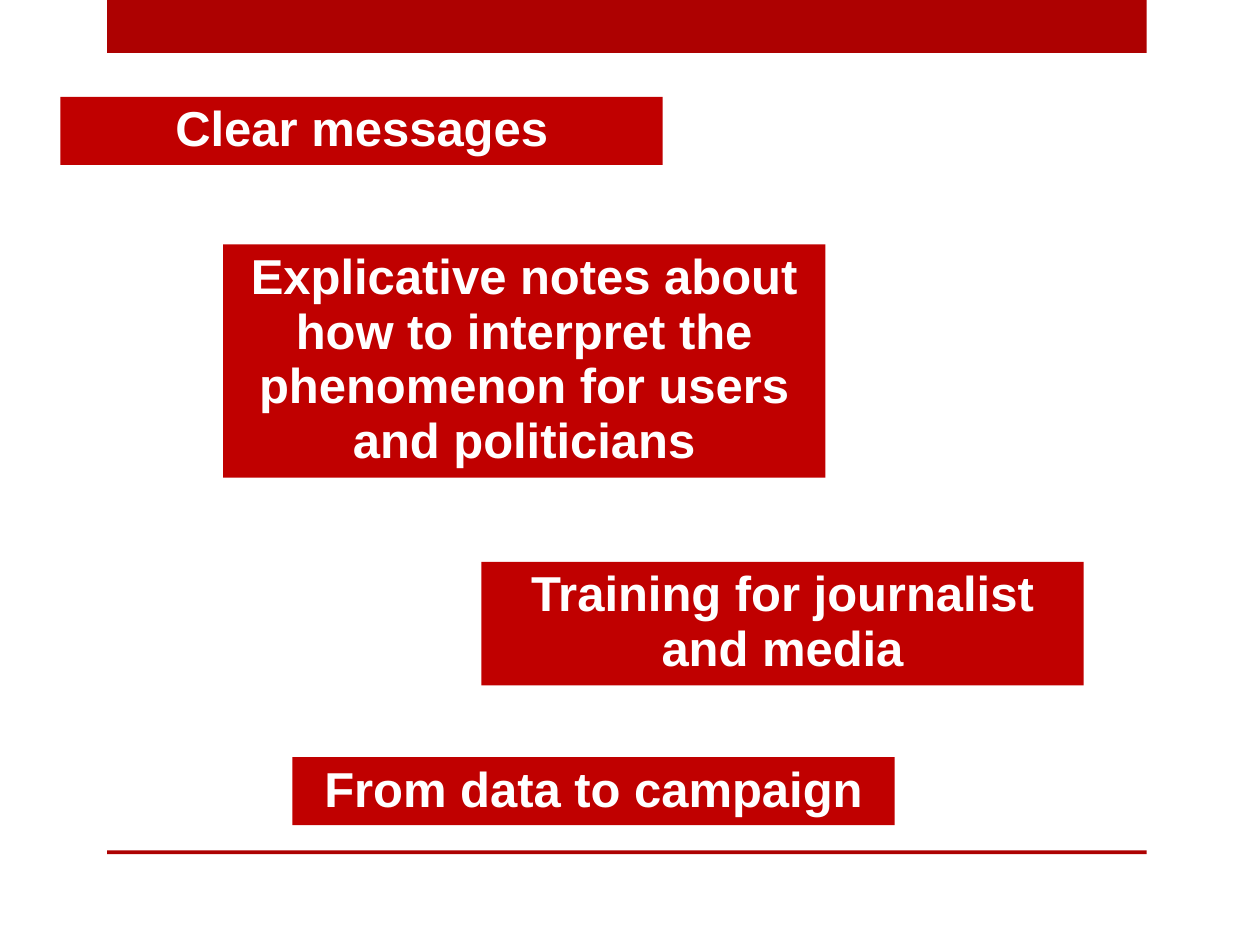
import pptx
import pptx.util
import pptx.dml.color
import pptx.enum.shapes
import pptx.enum.text
import pptx.oxml
import pptx.oxml.ns

Pt = pptx.util.Pt
DARK = pptx.dml.color.RGBColor(0xAD, 0x01, 0x01)
RED = pptx.dml.color.RGBColor(0xC0, 0x00, 0x00)
WHITE = pptx.dml.color.RGBColor(0xFF, 0xFF, 0xFF)
WIDE = 344.16
NOTES = [
    ("Training for journalist and media", 275.04, 321.12, 70.56),
    ("Clear messages", 34.56, 55.44, 38.88),
    ("Explicative notes about how to interpret the phenomenon for users and politicians",
     127.44, 139.68, 133.2),
    ("From data to campaign", 167.04, 432.72, 38.88),
]


def block(slide, box, fill):
    """Draw a plain filled rectangle in the box."""
    kind = pptx.enum.shapes.MSO_SHAPE.RECTANGLE
    shape = slide.shapes.add_shape(kind, *[Pt(side) for side in box])
    shape.shadow.inherit = False
    shape.fill.solid()
    shape.fill.fore_color.rgb = fill
    shape.line.fill.background()
    return shape


def frame(slide, box):
    """Draw the top bar and the foot rule at the edges of the box."""
    left, top, width, height = box
    thin = 2.16
    block(slide, (left, top, width, 30.24), DARK)
    block(slide, (left, top + height - thin, width, thin), DARK)


def note(slide, box, text):
    """Place one message in a red box."""
    body = block(slide, box, RED).text_frame
    body.word_wrap = True
    body.auto_size = pptx.enum.text.MSO_AUTO_SIZE.SHAPE_TO_FIT_TEXT
    body.vertical_anchor = pptx.enum.text.MSO_ANCHOR.TOP
    body.text = text
    para = body.paragraphs[0]
    para.alignment = pptx.enum.text.PP_ALIGN.CENTER
    para.line_spacing = 0.93
    para.space_before = Pt(0)
    before = para._p.pPr.find(pptx.oxml.ns.qn("a:spcBef"))
    before.remove(before[0])
    before.append(pptx.oxml.parse_xml(
        f'<a:spcPct {pptx.oxml.ns.nsdecls("a")} val="50000"/>'))
    font = para.runs[0].font
    font.name = "Arial"
    font.size = Pt(28)
    font.bold = True
    font.color.rgb = WHITE


def main():
    """Build and save the slide."""
    deck = pptx.Presentation()
    deck.slide_width, deck.slide_height = Pt(720), Pt(540)
    slide = deck.slides.add_slide(deck.slide_layouts[6])
    frame(slide, (61.2, 0, 594, 488.16))
    for text, left, top, height in NOTES:
        note(slide, (left, top, WIDE, height), text)
    deck.save("out.pptx")


if __name__ == "__main__":
    main()
